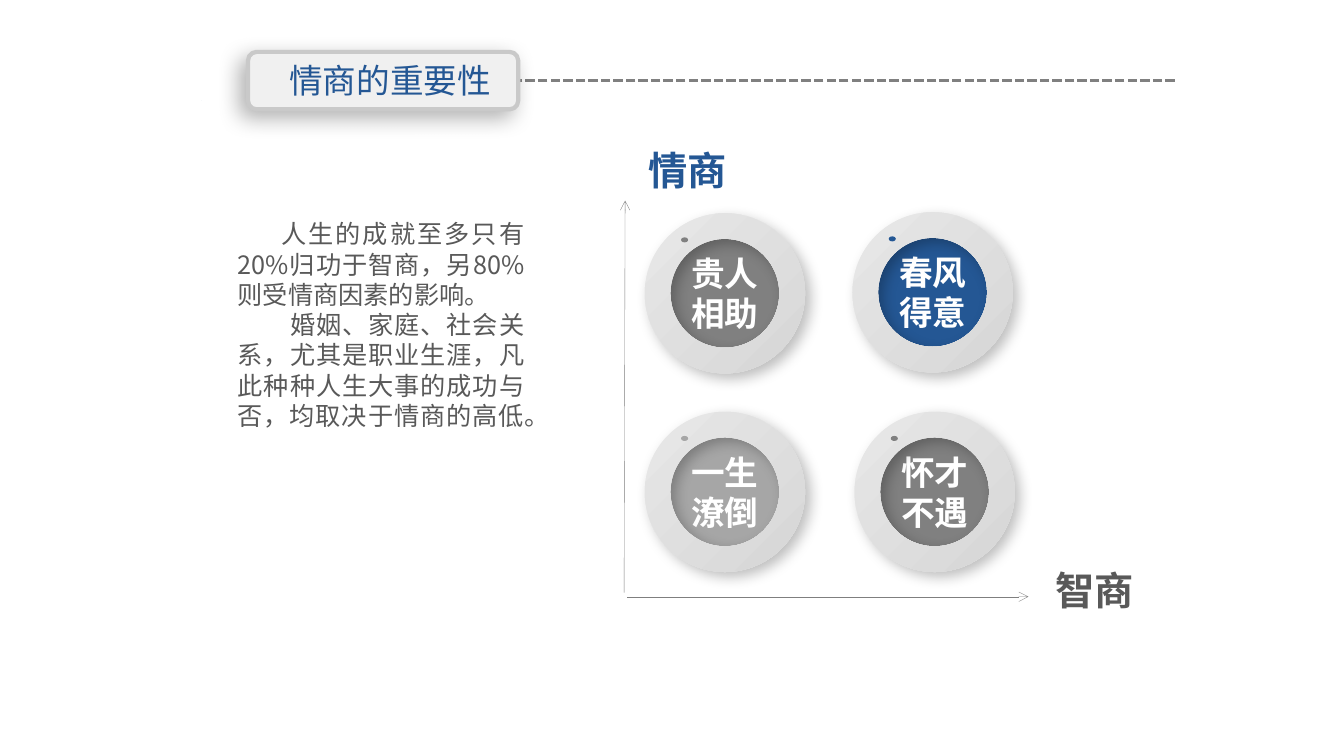
from lxml import etree
from pptx import Presentation
from pptx.dml.color import RGBColor
from pptx.enum.dml import MSO_LINE
from pptx.enum.shapes import MSO_CONNECTOR, MSO_SHAPE
from pptx.enum.text import MSO_ANCHOR, PP_ALIGN
from pptx.oxml.ns import qn
from pptx.util import Inches, Pt

STRAIGHT = MSO_CONNECTOR.STRAIGHT
RECTANGLE, ROUNDED = MSO_SHAPE.RECTANGLE, MSO_SHAPE.ROUNDED_RECTANGLE
DONUT, OVAL = MSO_SHAPE.DONUT, MSO_SHAPE.OVAL
TOP, MIDDLE = MSO_ANCHOR.TOP, MSO_ANCHOR.MIDDLE
LEFT, CENTER, JUSTIFY = PP_ALIGN.LEFT, PP_ALIGN.CENTER, PP_ALIGN.JUSTIFY
DASHED = MSO_LINE.SQUARE_DOT

THEME = {
    "font": "Noto Sans CJK SC",
    "blue": "245794", "icon": "005A9E", "text": "595959", "white": "FFFFFF",
    "gray": "808080", "light": "A6A6A6", "axis": "7F7F7F", "border": "C9C9C9",
    "panel": ("F0F0F0", "F1F1F1"), "ring": ("E8E8E8", "D6D6D6"),
    "title": 24, "body": 18, "badge": 24, "label": 28,
}

TITLE = "情商的重要性"
BODY = [
    ("人生的成就至多只有20%归功于智商，另80%则受情商因素的影响。", 0.43),
    ("婚姻、家庭、社会关系，尤其是职业生涯，凡此种种人生大事的成功与否，均取决于情商的高低。", 0.52),
]
BADGES = [
    ("怀才不遇", "gray", 9.27, 4.88),
    ("一生潦倒", "light", 7.19, 4.88),
    ("春风得意", "blue", 9.25, 2.9),
    ("贵人相助", "gray", 7.19, 2.91),
]
AXIS_LABELS = [
    ("情商", "blue", (6.2, 1.38, 1.24, 0.61)),
    ("智商", "text", (10.22, 5.57, 1.27, 0.56)),
]
AXES = [((6.22, 5.92), (10.2, 5.92)), ((6.19, 5.88), (6.2, 1.99))]
PAGE_ICON = [[
    (2.19, 1.03), (1.89, 1.03), (1.89, 0.69), (2, 0.69), (2, 0.58), (2.19, 0.58),
    (2.19, 0.63), (2.24, 0.58), (2.24, 0.54), (1.96, 0.54), (1.85, 0.65),
    (1.85, 1.07), (2.24, 1.07), (2.24, 0.87), (2.19, 0.92),
]]
PEN_ICON = [
    [(2.05, 0.84), (2.01, 0.95), (2.13, 0.92), (2.35, 0.7), (2.27, 0.62)],
    [(2.12, 0.9), (2.04, 0.93), (2.06, 0.85)],
]
RING_SIZE, HOLE_SIZE, BADGE_SIDE = 1.59, 1.08, 1.1
DOT_SIZE, DOT_OFFSET = (0.07, 0.05), (-0.4, -0.53)


def color(name):
    return RGBColor.from_string(THEME.get(name, name))


def paint(shape, fill):
    shape.shadow.inherit = False
    shape.line.fill.background()
    if isinstance(fill, tuple):
        shape.fill.gradient()
        shape.fill.gradient_angle = 315
        for stop, value in zip(shape.fill.gradient_stops, fill):
            stop.color.rgb = color(value)
    else:
        shape.fill.solid()
        shape.fill.fore_color.rgb = color(fill)


def add_shadow(shape, opacity, blur, distance, angle):
    effects = shape._element.spPr.find(qn("a:effectLst"))
    shadow = etree.SubElement(
        effects, qn("a:outerShdw"), blurRad=str(Pt(blur)), dist=str(Pt(distance)),
        dir=str(angle * 60000), algn="ctr", rotWithShape="0")
    black = etree.SubElement(shadow, qn("a:srgbClr"), val="000000")
    etree.SubElement(black, qn("a:alpha"), val=str(opacity * 1000))


def write(shape, paragraphs, size, ink, align=CENTER, anchor=MIDDLE, bold=False, wrap=True):
    frame = shape.text_frame
    frame.word_wrap = wrap
    frame.vertical_anchor = anchor
    for index, (text, indent) in enumerate(paragraphs):
        paragraph = frame.add_paragraph() if index else frame.paragraphs[0]
        paragraph.alignment = align
        if indent:
            paragraph._p.get_or_add_pPr().set("indent", str(Inches(indent)))
        run = paragraph.add_run()
        run.text = text
        run.font.size = Pt(THEME[size])
        run.font.bold = bold
        run.font.color.rgb = color(ink)
        run.font.name = THEME["font"]
        etree.SubElement(run._r.get_or_add_rPr(), qn("a:ea"), typeface=THEME["font"])


def add_text(slide, box, paragraphs, size, ink, **options):
    shape = slide.shapes.add_textbox(*map(Inches, box))
    write(shape, paragraphs, size, ink, **options)


def add_line(slide, start, end, ink, width):
    line = slide.shapes.add_connector(STRAIGHT, *map(Inches, start + end))
    line.line.color.rgb = color(ink)
    line.line.width = Pt(width)
    etree.SubElement(line._element.spPr, qn("a:effectLst"))
    return line


def add_centered(slide, preset, x, y, width, height, fill):
    box = (x - width / 2, y - height / 2, width, height)
    shape = slide.shapes.add_shape(preset, *map(Inches, box))
    paint(shape, fill)
    return shape


def add_outline(slide, contours, fill):
    builder = slide.shapes.build_freeform(*contours[0][0], scale=Inches(1))
    for index, points in enumerate(contours):
        if index:
            builder.move_to(*points[0])
        builder.add_line_segments(points[1:], close=True)
    paint(builder.convert_to_shape(), fill)


def add_header(slide):
    add_line(slide, (11.65, 0.8), (4.84, 0.8), "gray", 2.25).line.dash_style = DASHED
    panel = add_centered(slide, ROUNDED, 3.8, 0.8, 2.68, 0.57, THEME["panel"])
    panel.adjustments[0] = 0.15
    panel.line.color.rgb = color("border")
    panel.line.width = Pt(3)
    add_shadow(panel, 30, 16, 7, 135)
    add_text(slide, (2.77, 0.55, 2.22, 0.5), [(TITLE, 0)], "title", "blue",
             align=LEFT, anchor=TOP, wrap=False)
    for contours in (PAGE_ICON, PEN_ICON):
        add_outline(slide, contours, "icon")


def add_matrix(slide):
    for text, fill, x, y in BADGES:
        badge = add_centered(slide, RECTANGLE, x, y, BADGE_SIDE, BADGE_SIDE, fill)
        write(badge, [(text, 0)], "badge", "white", bold=True)
        ring = add_centered(slide, DONUT, x, y, RING_SIZE, RING_SIZE, THEME["ring"])
        ring.adjustments[0] = (1 - HOLE_SIZE / RING_SIZE) / 2
        add_shadow(ring, 25, 10, 5, 45)
        add_centered(slide, OVAL, x + DOT_OFFSET[0], y + DOT_OFFSET[1], *DOT_SIZE, fill)
    for start, end in AXES:
        axis = add_line(slide, start, end, "axis", 0.25)
        etree.SubElement(axis.line._get_or_add_ln(), qn("a:tailEnd"), type="arrow")
    for text, ink, box in AXIS_LABELS:
        add_text(slide, box, [(text, 0)], "label", ink, bold=True)


def main():
    presentation = Presentation()
    presentation.slide_width = Inches(13.33)
    presentation.slide_height = Inches(7.5)
    slide = presentation.slides.add_slide(presentation.slide_layouts[6])
    add_header(slide)
    add_text(slide, (2.26, 2.12, 3.04, 2.56), BODY, "body", "text",
             align=JUSTIFY, anchor=TOP)
    add_matrix(slide)
    presentation.save("out.pptx")


if __name__ == "__main__":
    main()
